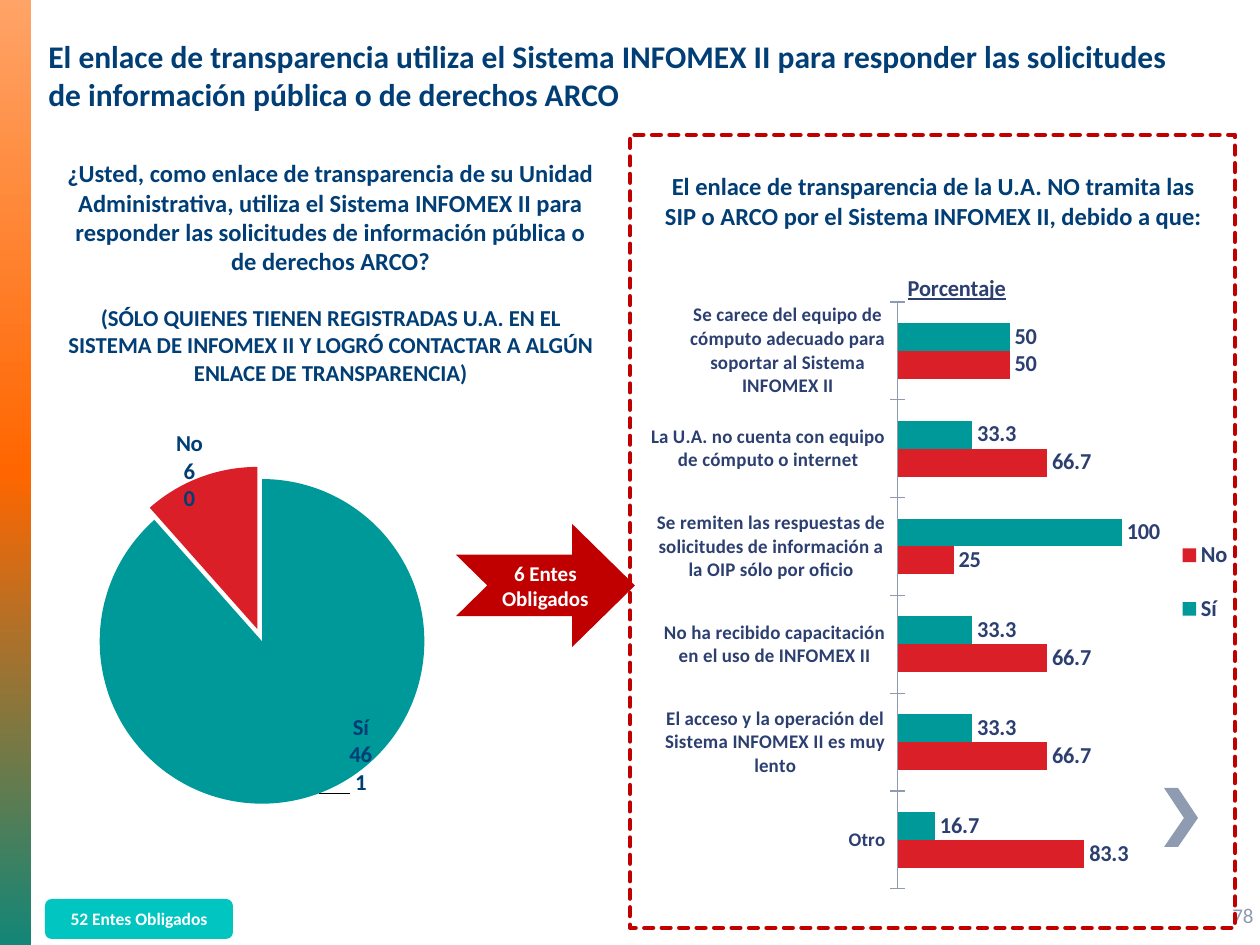
from copy import deepcopy
from lxml import etree
from pptx import Presentation
from pptx.chart.data import CategoryChartData
from pptx.dml.color import RGBColor
from pptx.enum.chart import XL_CHART_TYPE, XL_LABEL_POSITION, XL_LEGEND_POSITION, XL_TICK_MARK
from pptx.enum.dml import MSO_LINE
from pptx.enum.shapes import MSO_SHAPE
from pptx.enum.text import MSO_ANCHOR, PP_ALIGN
from pptx.oxml.ns import qn
from pptx.util import Inches, Pt

PX = Inches(1) / 126
HUES = {"navy": "003E75", "ink": "2C3F71", "teal": "009999", "red": "DA1F28",
        "dark": "C00000", "aqua": "00C5C0", "gray": "8E9BB0", "white": "FFFFFF",
        "peach": "FFA366", "orange": "FF6600", "green": "138677"}
RGB = {name: RGBColor.from_string(code) for name, code in HUES.items()}


def write(shape, lines, size, hue, align=PP_ALIGN.CENTER, anchor=MSO_ANCHOR.MIDDLE, bold=True):
    frame = shape.text_frame
    frame.word_wrap = True
    frame.vertical_anchor = anchor
    frame.text = "\n".join(lines)
    for par in frame.paragraphs:
        par.alignment = align
        font = par.font
        font.name, font.size, font.bold = "Calibri", Pt(size), bold
        font.color.rgb = RGB[hue]
    return frame


def place(parent, index, inner=False, **spots):
    """Give a chart part a manual layout, in fractions of the chart."""
    for old in parent.findall(qn("c:layout")):
        parent.remove(old)
    layout = etree.Element(qn("c:layout"))
    manual = etree.SubElement(layout, qn("c:manualLayout"))
    if inner:
        etree.SubElement(manual, qn("c:layoutTarget"), val="inner")
    if "w" in spots:
        for mode in ("xMode", "yMode"):
            etree.SubElement(manual, qn(f"c:{mode}"), val="edge")
    for key, val in spots.items():
        if key in "xywh":
            etree.SubElement(manual, qn(f"c:{key}"), val=str(val))
    parent.insert(index, layout)


deck = Presentation()
deck.slide_width, deck.slide_height = Inches(10), Inches(7.5)
slide = deck.slides.add_slide(deck.slide_layouts[6])
shapes = slide.shapes

# Gradient band on the left edge
band = shapes.add_shape(MSO_SHAPE.RECTANGLE, 0, 0, int(31 * PX), deck.slide_height)
band.shadow.inherit = False
band.line.fill.background()
band.fill.gradient()
band.fill.gradient_angle = 270
stops = band._element.spPr.find(".//" + qn("a:gsLst"))
stops.append(deepcopy(stops[0]))
for stop, hue, pos in zip(band.fill.gradient_stops, ("peach", "orange", "green"), (0, 0.5, 1)):
    stop.color.rgb = RGB[hue]
    stop.position = pos

# Chevron
pen = shapes.build_freeform(1178, 788, scale=PX)
pen.add_line_segments([(1164, 788), (1184, 818), (1164, 847), (1178, 847), (1198, 818)])
mark = pen.convert_to_shape()
mark.shadow.inherit = False
mark.fill.solid()
mark.fill.fore_color.rgb = RGB["gray"]
mark.line.fill.background()

# Texts: box, paragraphs, size, colour, alignment, anchor, bold
mid, left = PP_ALIGN.CENTER, PP_ALIGN.LEFT
top, center = MSO_ANCHOR.TOP, MSO_ANCHOR.MIDDLE
texts = [
    ((1220, 890, 53, 50), ["78"], 12, "gray", left, center, False),
    ((54, 152, 553, 242), [
        "¿Usted, como enlace de transparencia de su Unidad Administrativa, utiliza el Sistema "
        "INFOMEX II para responder las solicitudes de información pública o de derechos ARCO?",
        "(SÓLO QUIENES TIENEN REGISTRADAS U.A. EN EL SISTEMA DE INFOMEX II Y LOGRÓ CONTACTAR "
        "A ALGÚN ENLACE DE TRANSPARENCIA)"], 14, "navy", mid, top, True),
    ((643, 165, 581, 72), [
        "El enlace de transparencia de la U.A. NO tramita las SIP o ARCO por el Sistema "
        "INFOMEX II, debido a que:"], 14, "navy", mid, top, True),
    ((36, 16, 1148, 118), [
        "El enlace de transparencia utiliza el Sistema INFOMEX II para responder las "
        "solicitudes de información pública o de derechos ARCO"], 18, "navy", left, center, True),
]
for box, lines, *look in texts:
    frame = write(shapes.add_textbox(*[int(n * PX) for n in box]), lines, *look)
    for par in frame.paragraphs[1:]:
        par.font.size = Pt(13)
        par.space_before = Pt(16)

# Dashed frame, arrow and button
forms = [
    (MSO_SHAPE.RECTANGLE, (630, 135, 605, 793), None, None, 0),
    (MSO_SHAPE.NOTCHED_RIGHT_ARROW, (456, 524, 179, 123), "dark", "6 Entes Obligados", 12),
    (MSO_SHAPE.ROUNDED_RECTANGLE, (45, 899, 188, 40), "aqua", "52 Entes Obligados", 10),
]
for kind, box, hue, words, size in forms:
    form = shapes.add_shape(kind, *[int(n * PX) for n in box])
    form.shadow.inherit = False
    if hue:
        form.fill.solid()
        form.fill.fore_color.rgb = RGB[hue]
        form.line.fill.background()
        write(form, [words], size, "white")
    else:
        form.fill.background()
        form.line.color.rgb = RGB["dark"]
        form.line.width = Pt(2.5)
        form.line.dash_style = MSO_LINE.SQUARE_DOT
        form._element.spPr.find(qn("a:ln")).set("cap", "rnd")
    if kind == MSO_SHAPE.NOTCHED_RIGHT_ARROW:
        form.adjustments[1] = 0.51

# Charts: type, box, categories, series, colour, plot area
plans = [
    (XL_CHART_TYPE.PIE, (25, 354, 546, 536), ["Sí", "No"], {"Series 1": [46, 6]}, "navy",
     dict(x=0.12, y=0.21, w=0.62, h=0.63)),
    (XL_CHART_TYPE.BAR_CLUSTERED, (651, 242, 586, 667), [
        "Se carece del equipo de cómputo adecuado para soportar al Sistema INFOMEX II",
        "La U.A. no cuenta con equipo de cómputo o internet",
        "Se remiten las respuestas de solicitudes de información a la OIP sólo por oficio",
        "No ha recibido capacitación en el uso de INFOMEX II",
        "El acceso y la operación del Sistema INFOMEX II es muy lento",
        "Otro"],
     {"Sí": [50, 33.3, 100, 33.3, 33.3, 16.7], "No": [50, 66.7, 25, 66.7, 66.7, 83.3]}, "ink",
     dict(x=0.41, y=0.09, w=0.39, h=0.88)),
]
charts = []
for kind, box, cats, rows, hue, area in plans:
    data = CategoryChartData()
    data.categories = cats
    for name, vals in rows.items():
        data.add_series(name, vals)
    chart = shapes.add_chart(kind, *[int(n * PX) for n in box], data).chart
    font = chart.font
    font.name, font.size, font.bold = "Calibri", Pt(13), True
    font.color.rgb = RGB[hue]
    chart.has_title = chart.has_legend = False
    place(chart._chartSpace.chart.plotArea, 0, inner=True, **area)
    charts.append(chart)
pie, bars = charts

# Pie slices and labels
pie.plots[0].vary_by_categories = True
ring = pie.plots[0].series[0]
tags = ring.data_labels
tags.number_format, tags.number_format_is_linked = "###0", False
tags.show_value = tags.show_percentage = tags.show_category_name = True
tags.position = XL_LABEL_POSITION.OUTSIDE_END
for i, (hue, x, y) in enumerate([("teal", 0.05, -0.16), ("red", 0.01, 0.08)]):
    fill = ring.points[i].format.fill
    fill.solid()
    fill.fore_color.rgb = RGB[hue]
    ring.points[i].data_label.position = XL_LABEL_POSITION.OUTSIDE_END
    tag = tags._element.findall(qn("c:dLbl"))[i]
    place(tag, 1, x=x, y=y)
    for name in ("showVal", "showCatName", "showPercent"):
        tag.find(qn(f"c:{name}")).set("val", "1")
for end in list(ring._element.iter(qn("c:showBubbleSize"))):
    gap = etree.Element(qn("c:separator"))
    gap.text = "\n"
    end.addnext(gap)
burst = etree.Element(qn("c:explosion"), val="4")
ring._element.find(qn("c:dPt")).addprevious(burst)

# Bars, axes, title and legend
plot = bars.plots[0]
plot.vary_by_categories = False
plot.gap_width = 150
for row, hue in zip(plot.series, ("teal", "red")):
    row.format.fill.solid()
    row.format.fill.fore_color.rgb = RGB[hue]
    row.data_labels.show_value = True
    row.data_labels.position = XL_LABEL_POSITION.OUTSIDE_END
axis = bars.category_axis
axis.reverse_order = True
axis.major_tick_mark = XL_TICK_MARK.CROSS
axis.tick_labels.font.size = Pt(11)
axis.format.line.color.rgb = RGB["gray"]
scale = bars.value_axis
scale.visible = scale.has_major_gridlines = False
scale.minimum_scale, scale.maximum_scale = 0, 100
bars.has_title = True
head = bars.chart_title.text_frame
head.text = "Porcentaje"
font = head.paragraphs[0].font
font.name, font.size, font.bold, font.underline = "Calibri", Pt(13), True, True
font.color.rgb = RGB["ink"]
place(bars.chart_title._element, 1, x=0.42, y=0.04, w=0.2, h=0.05)
bars.has_legend = True
bars.legend.position = XL_LEGEND_POSITION.RIGHT
bars.legend.include_in_layout = False
place(bars.legend._element, 1, x=0.9, y=0.41, w=0.1, h=0.2)

deck.save("out.pptx")
